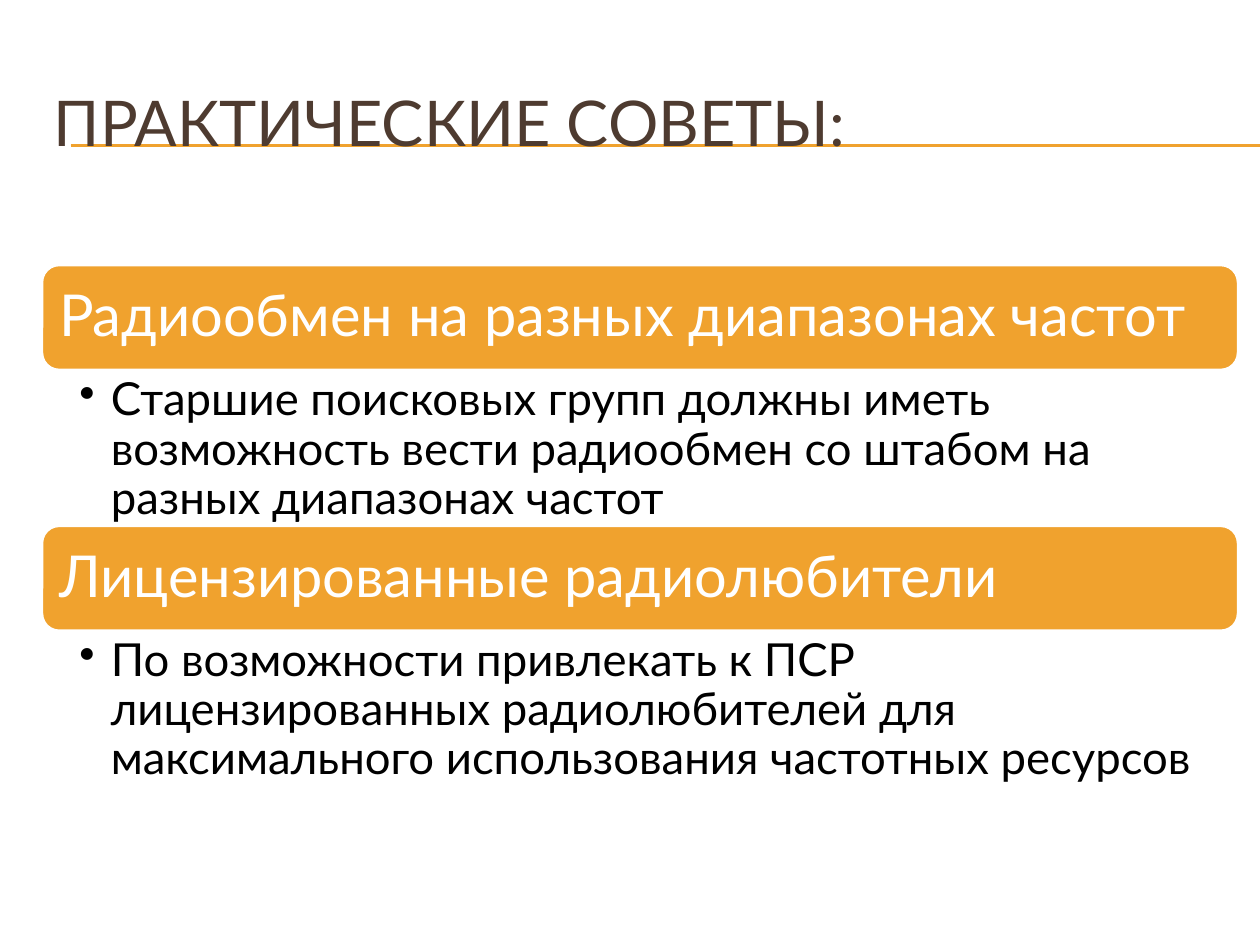
from lxml import etree
from pptx import Presentation
from pptx.dml.color import RGBColor
from pptx.enum.shapes import MSO_CONNECTOR, MSO_SHAPE
from pptx.enum.text import MSO_ANCHOR, PP_ALIGN
from pptx.oxml.ns import qn
from pptx.util import Inches, Pt

STRAIGHT = MSO_CONNECTOR.STRAIGHT
ROUNDED = MSO_SHAPE.ROUNDED_RECTANGLE
TOP, MIDDLE = MSO_ANCHOR.TOP, MSO_ANCHOR.MIDDLE
LEFT = PP_ALIGN.LEFT

# Content
HEADING = "ПРАКТИЧЕСКИЕ СОВЕТЫ:"
TIPS = [
    ("Радиообмен на разных диапазонах частот",
     "Старшие поисковых групп должны иметь возможность вести радиообмен "
     "со штабом на разных диапазонах частот"),
    ("Лицензированные радиолюбители",
     "По возможности привлекать к ПСР лицензированных радиолюбителей "
     "для максимального использования частотных ресурсов"),
]

THEME = {
    "font": "Lato",
    "accent": RGBColor(0xF0, 0xA2, 0x2E),
    "heading": RGBColor(0x4E, 0x3B, 0x30),
    "light": RGBColor(0xFF, 0xFF, 0xFF),
    "body": RGBColor(0, 0, 0),
    "heading_size": 36,
    "banner_size": 33,
    "body_size": 26,
}

# Layout, in inches
SLIDE_W, SLIDE_H = 10, 7.5
MARGIN, CONTENT_W = 0.33, 9.5
HEADING_TOP, HEADING_H = 0.5, 0.92
RULE_LEFT, RULE_TOPS = 0.56, (1.15, 1.16)
TIPS_TOP, BANNER_H, DETAIL_H = 2.1, 0.84, 1.23
BULLET_INDENT = 0.25


def write(box, text, size, color, anchor, insets):
    frame = box.text_frame
    frame.word_wrap = True
    frame.vertical_anchor = anchor
    (frame.margin_left, frame.margin_top,
     frame.margin_right, frame.margin_bottom) = map(Inches, insets)
    paragraph = frame.paragraphs[0]
    paragraph.text = text
    paragraph.alignment = LEFT
    paragraph.font.name = THEME["font"]
    paragraph.font.size = Pt(size)
    paragraph.font.color.rgb = color
    return paragraph


def add_bullet(paragraph):
    properties = paragraph._p.get_or_add_pPr()
    properties.set("marL", str(Inches(BULLET_INDENT)))
    properties.set("indent", str(-Inches(BULLET_INDENT)))
    bullet = etree.Element(qn("a:buChar"), char="•")
    # The bullet comes before the default run properties
    properties.find(qn("a:defRPr")).addprevious(bullet)


prs = Presentation()
prs.slide_width, prs.slide_height = Inches(SLIDE_W), Inches(SLIDE_H)
slide = prs.slides.add_slide(prs.slide_layouts[6])
shapes = slide.shapes

# Rules behind the heading
for rule_top in RULE_TOPS:
    rule = shapes.add_connector(STRAIGHT, Inches(RULE_LEFT), Inches(rule_top),
                                Inches(SLIDE_W), Inches(rule_top))
    rule.line.color.rgb = THEME["accent"]
    rule.line.width = Pt(0.75)
    etree.SubElement(rule._element.spPr, qn("a:effectLst"))

# Heading
heading = shapes.add_textbox(Inches(MARGIN), Inches(HEADING_TOP),
                             Inches(CONTENT_W), Inches(HEADING_H))
write(heading, HEADING, THEME["heading_size"], THEME["heading"], MIDDLE,
      (0.1, 0.05, 0.1, 0.05))

# Each tip: a banner with its explanation below
for row, (tip, explanation) in enumerate(TIPS):
    banner_top = TIPS_TOP + row * (BANNER_H + DETAIL_H)
    banner = shapes.add_shape(ROUNDED, Inches(MARGIN), Inches(banner_top),
                              Inches(CONTENT_W), Inches(BANNER_H))
    banner.shadow.inherit = False
    banner.fill.solid()
    banner.fill.fore_color.rgb = THEME["accent"]
    banner.line.color.rgb = THEME["light"]
    banner.line.width = Pt(2)
    banner_text = write(banner, tip, THEME["banner_size"], THEME["light"],
                        MIDDLE, (0.1, 0.1, 0.1, 0.1))
    banner_text.line_spacing = 0.9

    detail = shapes.add_textbox(Inches(MARGIN), Inches(banner_top + BANNER_H),
                                Inches(CONTENT_W), Inches(DETAIL_H))
    detail_text = write(detail, explanation, THEME["body_size"], THEME["body"],
                        TOP, (0.3, 0.05, 0.26, 0.05))
    detail_text.line_spacing = 0.9
    add_bullet(detail_text)

prs.save("out.pptx")
